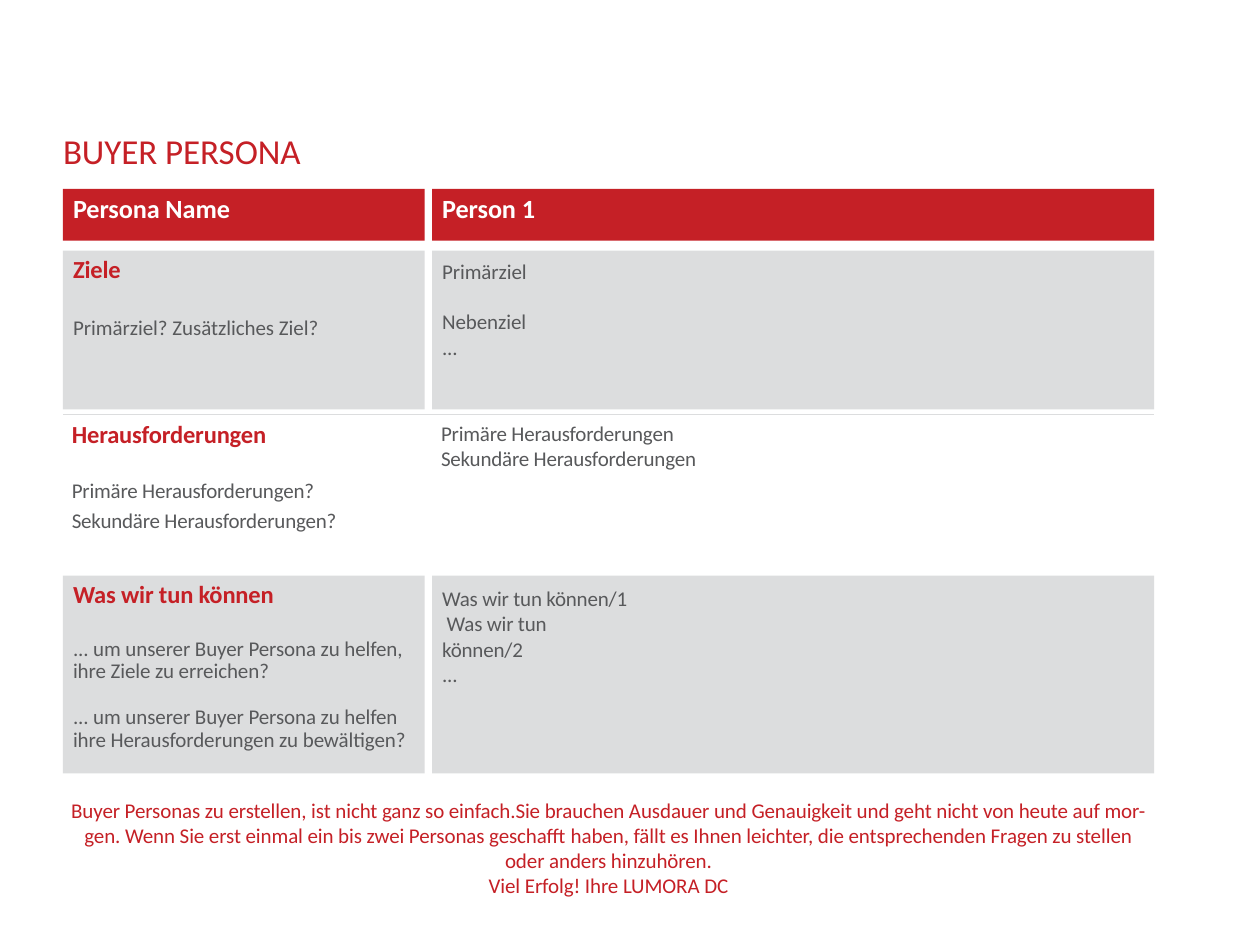
from pptx import Presentation
from pptx.dml.color import RGBColor
from pptx.enum.shapes import MSO_CONNECTOR, MSO_SHAPE
from pptx.enum.text import MSO_ANCHOR, PP_ALIGN
from pptx.oxml.ns import qn
from pptx.util import Inches, Pt
from lxml.etree import SubElement

THEME = dict(
    font="Calibri", red="C52026", grey="DCDDDE", text="58595B", white="FFFFFF",
    title=20, header=15, heading=14, body=12,
)

# Paragraph styles: size and colour are keys of THEME, track is in 1/100 pt.
HEADER = dict(size="header", color="white", bold=True, track=-5)
HEADING = dict(size="heading", color="red", bold=True)
BODY = dict(size="body", color="text")
NOTE = dict(size="body", color="red", align=PP_ALIGN.CENTER, track=-5)


def para(text, style, **extra):
    return text, {**style, **extra}


# Filled rows: top, height, fill, top insets of both cells, left cell, right cell.
ROWS = [
    (1.5, 0.41, "red", (0.03, 0.03),
     [para("Persona Name", HEADER, before=1.9)],
     [para("Person 1", HEADER, before=1.9)]),
    (1.99, 1.26, "grey", (0.03, 0.06),
     [para("Ziele", HEADING, before=2.1),
      para("Primärziel? Zusätzliches Ziel?", BODY, before=17.3, track=-2)],
     [para("Primärziel", BODY, before=4.2, track=-5),
      para("Nebenziel", BODY, before=14.6, track=-5),
      para("...", BODY)]),
    (4.57, 1.57, "grey", (0.03, 0.08),
     [para("Was wir tun können", HEADING, before=2.1),
      para("... um unserer Buyer Persona zu helfen,\nihre Ziele zu erreichen?",
           BODY, before=16.8, spacing=Pt(12.8), track=-5),
      para("... um unserer Buyer Persona zu helfen\nihre Herausforderungen zu bewältigen?",
           BODY, before=13.5, spacing=Pt(12.8), track=-5)],
     [para("Was wir tun können/1\n Was wir tun\nkönnen/2", BODY, before=5.5),
      para("...", BODY)]),
]

# Free text: left, top, width, height, paragraphs.
TEXTS = [
    (0.5, 1.02, 1.92, 0.36,
     [para("BUYER PERSONA", dict(size="title", color="red"), before=1.4, track=-5)]),
    (0.57, 3.32, 1.59, 0.26, [para("Herausforderungen", HEADING, before=1)]),
    (0.57, 3.75, 2.17, 0.49,
     [para("Primäre Herausforderungen?\nSekundäre Herausforderungen?",
           BODY, before=1, spacing=1.17)]),
    (3.5, 3.33, 2.09, 0.43,
     [para("Primäre Herausforderungen\nSekundäre Herausforderungen", BODY, before=1)]),
    (0.5, 6.32, 8.66, 0.83,
     [para("Buyer Personas zu erstellen, ist nicht ganz so einfach.Sie brauchen Ausdauer "
           "und Genauigkeit und geht nicht von heute auf mor-\n"
           "gen. Wenn Sie erst einmal ein bis zwei Personas geschafft haben, fällt es Ihnen "
           "leichter, die entsprechenden Fragen zu stellen\n"
           "oder anders hinzuhören.", NOTE, before=1),
      para("Viel Erfolg! Ihre LUMORA DC", NOTE)]),
]

SLIDE_W, SLIDE_H = Pt(720), Pt(539)
LEFT, RIGHT, GAP, LABEL_W = 0.5, 9.16, 0.06, 2.87
VALUE_X = LEFT + LABEL_W + GAP
COLUMNS = [(LEFT, LABEL_W), (VALUE_X, RIGHT - VALUE_X)]
PAD = 0.08
RULE_Y = 3.29


def rgb(name):
    return RGBColor.from_string(THEME[name])


def add_para(p, text, size, color, bold=False, align=PP_ALIGN.LEFT, before=0,
             spacing=None, track=-10):
    p.alignment = align
    p.space_before = Pt(before)
    if spacing:
        p.line_spacing = spacing
    for i, line in enumerate(text.split("\n")):
        if i:
            p.add_line_break()
        r = p.add_run()
        r.text = line
        r.font.name = THEME["font"]
        r.font.size = Pt(THEME[size])
        r.font.bold = bold
        r.font.color.rgb = rgb(color)
        r.font._element.set("spc", str(track))


def fill_text(s, paras, left=0, top=0.01):
    tf = s.text_frame
    tf.word_wrap = True
    tf.vertical_anchor = MSO_ANCHOR.TOP
    tf.margin_left, tf.margin_top = Inches(left), Inches(top)
    tf.margin_right = tf.margin_bottom = 0
    for i, (text, style) in enumerate(paras):
        add_para(tf.add_paragraph() if i else tf.paragraphs[0], text, **style)


def add_cell(sp, box, fill, paras, inset):
    s = sp.add_shape(MSO_SHAPE.RECTANGLE, *map(Inches, box))
    s.shadow.inherit = False
    s.fill.solid()
    s.fill.fore_color.rgb = rgb(fill)
    s.line.fill.background()
    fill_text(s, paras, left=PAD, top=inset)


def add_rule(sp, y):
    c = sp.add_connector(MSO_CONNECTOR.STRAIGHT, Inches(LEFT), Inches(y), Inches(RIGHT), Inches(y))
    c.line.color.rgb = rgb("grey")
    c.line.width = Pt(0.5)
    SubElement(c._element.spPr, qn("a:effectLst"))


def main():
    prs = Presentation()
    prs.slide_width, prs.slide_height = SLIDE_W, SLIDE_H
    sp = prs.slides.add_slide(prs.slide_layouts[6]).shapes

    for top, height, fill, insets, *cells in ROWS:
        for (x, width), paras, inset in zip(COLUMNS, cells, insets):
            add_cell(sp, (x, top, width, height), fill, paras, inset)
    add_rule(sp, RULE_Y)
    for *box, paras in TEXTS:
        fill_text(sp.add_textbox(*map(Inches, box)), paras)

    prs.save("out.pptx")


if __name__ == "__main__":
    main()
